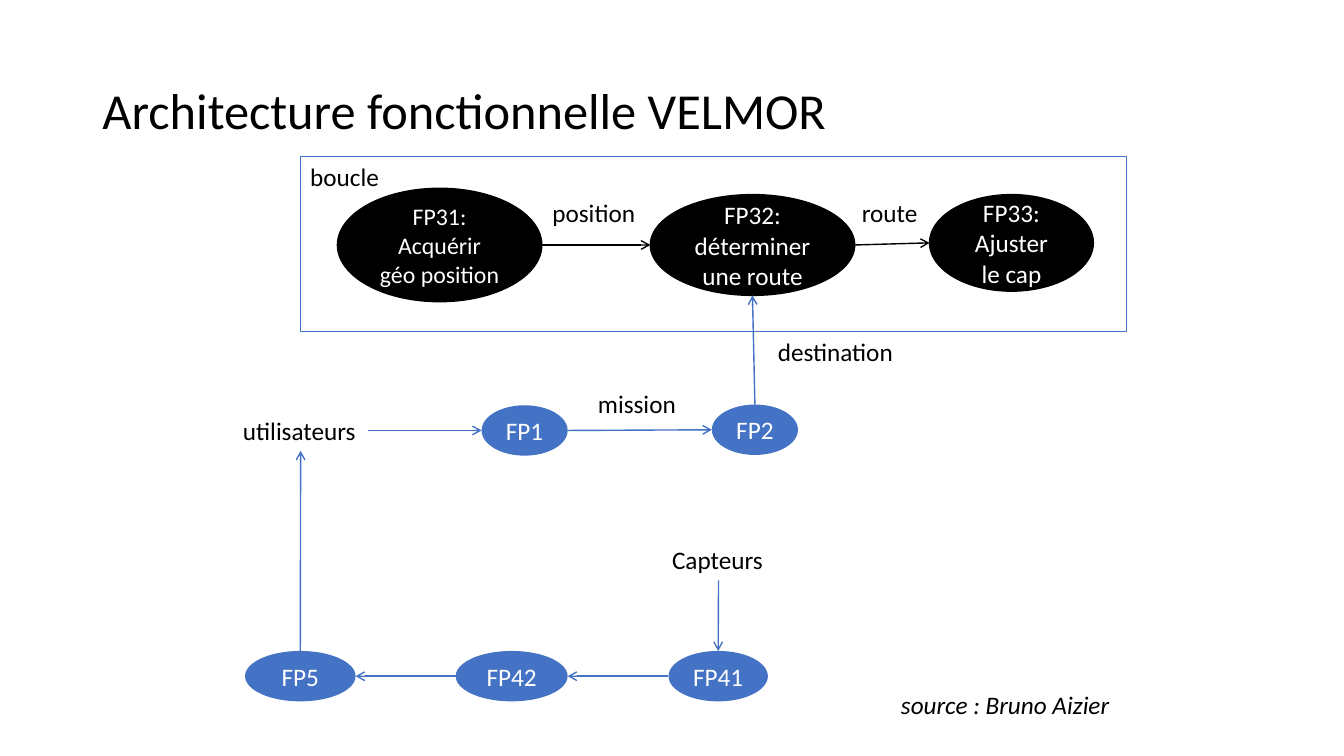
from lxml import etree
from pptx import Presentation
from pptx.dml.color import RGBColor
from pptx.enum.shapes import MSO_CONNECTOR, MSO_SHAPE
from pptx.enum.text import MSO_ANCHOR, MSO_AUTO_SIZE, PP_ALIGN
from pptx.oxml.ns import qn
from pptx.util import Pt

COLOURS = {
    "blue": RGBColor.from_string("4472C4"),
    "black": RGBColor.from_string("000000"),
    "white": RGBColor.from_string("FFFFFF"),
}


def write(frame, lines, size, colour, align=PP_ALIGN.LEFT, italic=None):
    """Fill a text frame with one paragraph per line."""
    for number, line in enumerate(lines):
        paragraph = frame.paragraphs[0] if number == 0 else frame.add_paragraph()
        paragraph.alignment = align
        run = paragraph.add_run()
        run.text = line
        run.font.name = "Calibri"
        run.font.size = Pt(size)
        run.font.italic = italic
        run.font.color.rgb = COLOURS[colour]


def side_point(shape, side):
    """Return the middle of one side of a shape."""
    across, down = {"left": (0, 0.5), "right": (1, 0.5),
                    "top": (0.5, 0), "bottom": (0.5, 1)}[side]
    return (int(shape.left + across * shape.width),
            int(shape.top + down * shape.height))


deck = Presentation()
deck.slide_width, deck.slide_height = Pt(960), Pt(540)
slide = deck.slides.add_slide(deck.slide_layouts[5])
shapes = slide.shapes

title = shapes.title
title.left, title.top, title.width, title.height = Pt(66), Pt(29), Pt(828), Pt(104)
title.text_frame.vertical_anchor = MSO_ANCHOR.MIDDLE
write(title.text_frame, ["Architecture fonctionnelle VELMOR"], 36, "black")
title.text_frame.paragraphs[0].line_spacing = 0.9

loop = shapes.add_shape(MSO_SHAPE.RECTANGLE, Pt(214.5), Pt(111.5), Pt(590), Pt(125.5))
loop.shadow.inherit = False
loop.fill.background()
loop.line.color.rgb = COLOURS["blue"]
loop.line.width = Pt(0.5)
loop.text_frame.vertical_anchor = MSO_ANCHOR.TOP
write(loop.text_frame, ["boucle"], 18, "black")

# Functions: lines, text size, colour, left, top, width, height
functions = [
    ("FP1", ["FP1"], 18, "blue", 344, 289.5, 61.5, 36),
    ("FP2", ["FP2"], 18, "blue", 508.5, 289, 61.5, 36),
    ("FP32", ["FP32: déterminer une route"], 18, "black", 464.5, 139, 146, 72),
    ("FP31", ["FP31: Acquérir", "géo position"], 17, "black", 241, 134.5, 146, 81),
    ("FP33", ["FP33:", "Ajuster le cap"], 18, "black", 664, 139, 117, 69),
    ("FP41", ["FP41"], 18, "blue", 477.5, 465, 71, 36),
    ("FP42", ["FP42"], 18, "blue", 325.5, 465, 80, 36),
    ("FP5", ["FP5"], 18, "blue", 175, 465, 79, 36),
]
nodes = {}
for name, lines, size, colour, *box in functions:
    ellipse = shapes.add_shape(MSO_SHAPE.OVAL, *map(Pt, box))
    ellipse.shadow.inherit = False
    ellipse.fill.solid()
    ellipse.fill.fore_color.rgb = COLOURS[colour]
    frame = ellipse.text_frame
    frame.vertical_anchor = MSO_ANCHOR.MIDDLE
    if colour == "black":
        ellipse.line.color.rgb = COLOURS["black"]
        ellipse.line.width = Pt(1)
    else:
        ellipse.line.fill.background()
        frame.margin_left = frame.margin_right = Pt(0)
    write(frame, lines, size, "white", PP_ALIGN.CENTER)
    nodes[name] = ellipse

# Labels: left, top, width
labels = [
    ("Capteurs", 473, 385.5, 80.5),
    ("utilisateurs", 166.5, 293, 96.5),
    ("mission", 420, 274, 70.5),
    ("destination", 548.5, 237, 98),
    ("route", 608.5, 137.5, 55.5),
    ("position", 387.5, 137.5, 74),
    ("source : Bruno Aizier", 636.5, 489, 169),
]
for words, left, top, width in labels:
    label = shapes.add_textbox(Pt(left), Pt(top), Pt(width), Pt(29))
    label.text_frame.word_wrap = False
    label.text_frame.auto_size = MSO_AUTO_SIZE.SHAPE_TO_FIT_TEXT
    write(label.text_frame, [words], 18, "black",
          italic=True if words.startswith("source") else None)
    nodes[words] = label

flows = [
    ("FP1", "right", "FP2", "left", "blue"),
    ("FP2", "top", "FP32", "bottom", "blue"),
    ("FP32", "right", "FP33", "left", "black"),
    ("FP31", "right", "FP32", "left", "black"),
    ("Capteurs", "bottom", "FP41", "top", "blue"),
    ("FP41", "left", "FP42", "right", "blue"),
    ("FP42", "left", "FP5", "right", "blue"),
    ("FP5", "top", "utilisateurs", "bottom", "blue"),
    ("utilisateurs", "right", "FP1", "left", "blue"),
]
for source, exit_side, target, entry_side, colour in flows:
    arrow = shapes.add_connector(MSO_CONNECTOR.STRAIGHT,
                                 *side_point(nodes[source], exit_side),
                                 *side_point(nodes[target], entry_side))
    arrow.line.color.rgb = COLOURS[colour]
    arrow.line.width = Pt(1)
    properties = arrow.line._get_or_add_ln()
    etree.SubElement(properties, qn("a:tailEnd"), type="arrow")
    etree.SubElement(properties.getparent(), qn("a:effectLst"))

deck.save("out.pptx")
